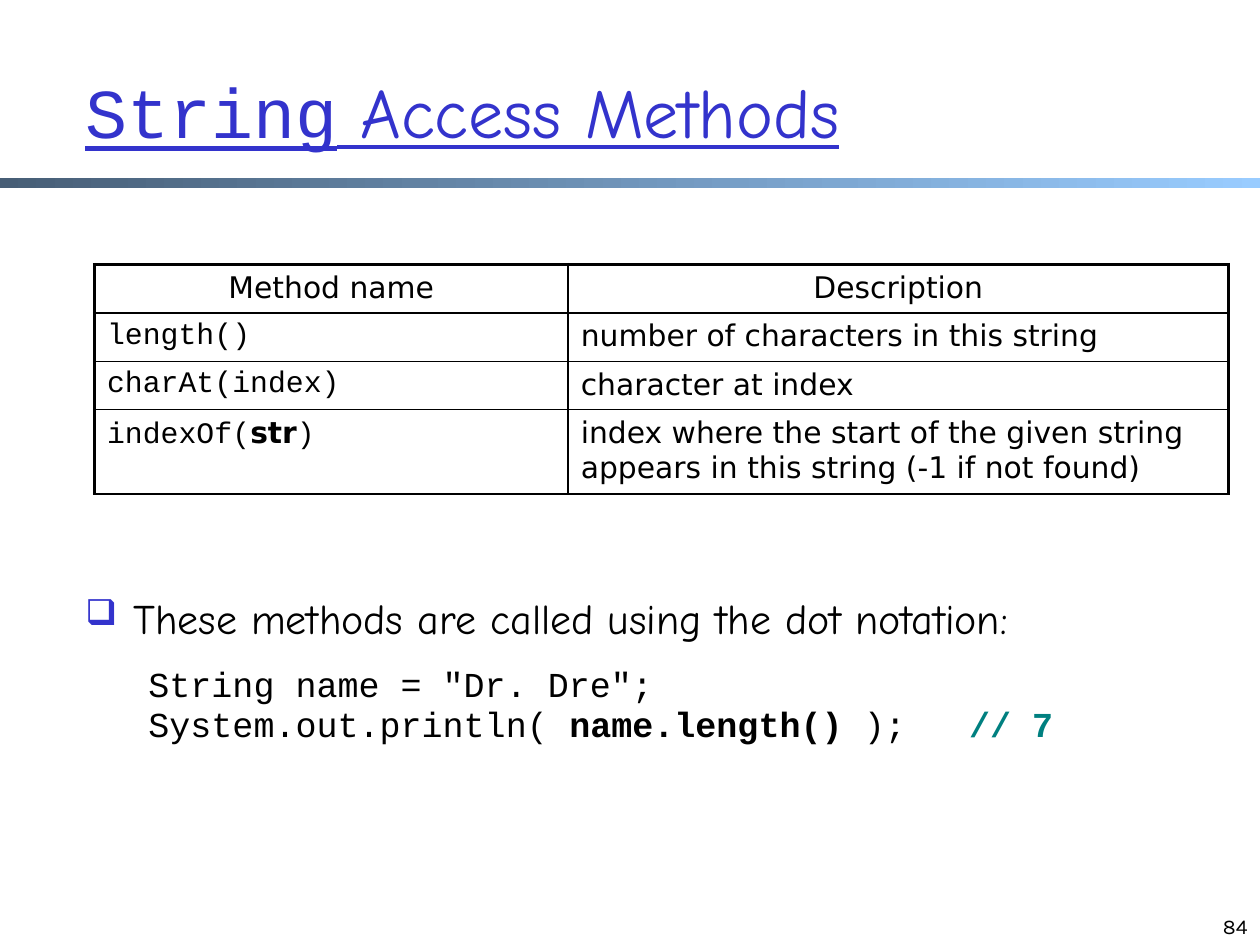
"""Build a slide on the access methods of String."""
from lxml import etree
from pptx import Presentation
from pptx.dml.color import RGBColor
from pptx.enum.shapes import MSO_SHAPE
from pptx.enum.text import MSO_ANCHOR, PP_ALIGN
from pptx.oxml.ns import qn
from pptx.util import Inches, Pt

RECT = MSO_SHAPE.RECTANGLE
MIDDLE, BOTTOM, TOP = MSO_ANCHOR.MIDDLE, MSO_ANCHOR.BOTTOM, MSO_ANCHOR.TOP
CENTER, RIGHT, LEFT = PP_ALIGN.CENTER, PP_ALIGN.RIGHT, PP_ALIGN.LEFT
CODE, HAND, SANS = "Courier New", "Comic Neue", "DejaVu Sans"
BLUE, BLACK, TEAL = "3333CC", "000000", "008080"


def style(font, size, name, color=BLACK):
    font.size, font.name = Pt(size), name
    font.color.rgb = RGBColor.from_string(color)


def add_box(left, top, width, height, anchor):
    box = slide.shapes.add_textbox(Inches(left), Inches(top), Inches(width), Inches(height))
    frame = box.text_frame
    frame.word_wrap = True
    frame.vertical_anchor = anchor
    return frame


deck = Presentation()
deck.slide_width, deck.slide_height = Inches(10), Inches(7.5)
slide = deck.slides.add_slide(deck.slide_layouts[6])

bar = slide.shapes.add_shape(RECT, 0, Inches(1.41), Inches(10), Inches(0.08))
bar.shadow.inherit = False
bar.line.fill.background()
bar.fill.gradient()
bar.fill.gradient_angle = 0
for stop, color in zip(bar.fill.gradient_stops, ("475E76", "99CCFF")):
    stop.color.rgb = RGBColor.from_string(color)

title = add_box(0.58, 0.25, 9.08, 1.25, MIDDLE).paragraphs[0]
for text, name in (("String", CODE), (" Access Methods", HAND)):
    run = title.add_run()
    run.text = text
    style(run.font, 40, name, BLUE)
    run.font.underline = True

rows = [
    ("Method name", "Description"),
    ("length()", "number of characters in this string"),
    ("charAt(index)", "character at index"),
    ("indexOf(|str|)", "index where the start of the given string "
     "appears in this string (-1 if not found)"),
]
table = slide.shapes.add_table(
    len(rows), 2, Inches(0.75), Inches(2.1), Inches(9), Inches(1.81)).table
table.first_row = table.horz_banding = False
for col, width in zip(table.columns, (3.76, 5.24)):
    col.width = Inches(width)
for row, height in zip(table.rows, (0.38, 0.38, 0.38, 0.66)):
    row.height = Inches(height)

for r, texts in enumerate(rows):
    for c, text in enumerate(texts):
        cell = table.cell(r, c)
        para = cell.text_frame.paragraphs[0]
        para.alignment = LEFT if r else CENTER
        for i, part in enumerate(text.split("|")):
            run = para.add_run()
            run.text = part
            style(run.font, 17, CODE if r and not c and i != 1 else SANS)
            run.font.bold = i == 1
        props = cell._tc.get_or_add_tcPr()
        thick = {"lnL": c == 0, "lnR": c == 1, "lnT": r == 0, "lnB": False}
        for side, heavy in thick.items():
            line = etree.SubElement(props, qn(f"a:{side}"), w=str(Pt(2.25 if heavy else 1)))
            fill = etree.SubElement(line, qn("a:solidFill"))
            etree.SubElement(fill, qn("a:srgbClr"), val=BLACK)
        cell.fill.background()

body = add_box(0.58, 4.65, 8.5, 1.5, TOP)
point = body.paragraphs[0]
props = point._p.get_or_add_pPr()
props.set("marL", str(Inches(0.38)))
props.set("indent", str(Inches(-0.38)))
tint = etree.SubElement(props, qn("a:buClr"))
etree.SubElement(tint, qn("a:srgbClr"), val=BLUE)
etree.SubElement(props, qn("a:buSzPct"), val="85000")
etree.SubElement(props, qn("a:buChar"), char="❑")
point.text = "These methods are called using the dot notation:"
style(point.font, 24, HAND)

code = [
    (16, [('String name = "Dr. Dre";', BLACK, False)]),
    (4, [("System.out.println( ", BLACK, False), ("name.length() ", BLACK, True),
         (");   ", BLACK, False), ("// 7", TEAL, True)]),
]
for gap, parts in code:
    para = body.add_paragraph()
    para._p.get_or_add_pPr().set("marL", str(Inches(0.5)))
    para.line_spacing = 0.8
    para.space_before = Pt(gap)
    for text, color, bold in parts:
        run = para.add_run()
        run.text = text
        style(run.font, 20, CODE, color)
        run.font.bold = bold

page = add_box(7.67, 7, 2.33, 0.5, BOTTOM).paragraphs[0]
page.text = "84"
page.alignment = RIGHT
style(page.font, 12, "Karla")

deck.save("out.pptx")
